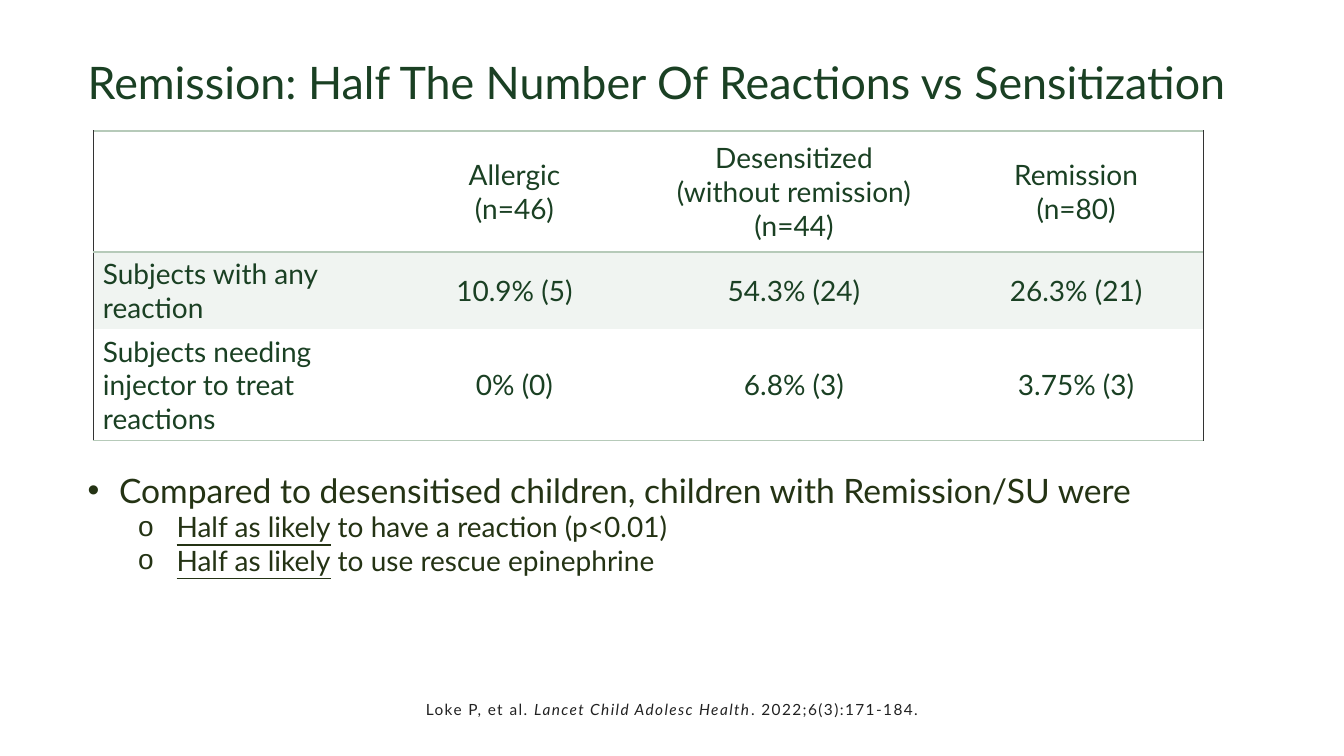
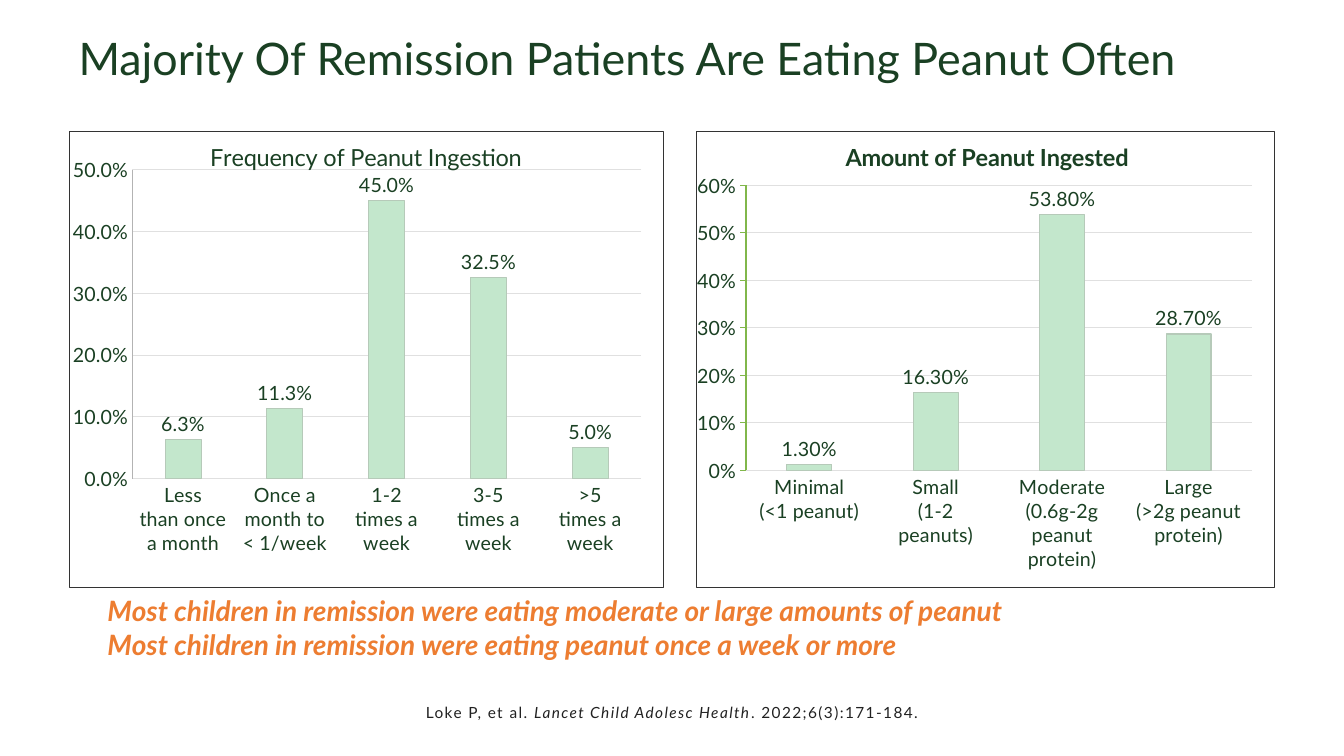
from lxml import etree
from pptx import Presentation, util as u
from pptx.chart.data import CategoryChartData
from pptx.dml.color import RGBColor
from pptx.enum import chart as ch, text as t
from pptx.oxml import parse_xml
from pptx.oxml.ns import nsdecls, qn

COLORS = {
    "heading": "1A4023", "body": "243314", "citation": "212121", "accent": "ED7D31",
    "bar": "C3E7CC", "edge": "B6CAB9", "frame": "333333", "band": "F0F4F1",
    "grid": "E0E0E0", "gray": "B3B3B3", "green": "81B74B",
}
FONT = "Lato"
TITLE = {"size": 32, "color": "heading"}
CITATION = [[("Loke P, et al. ", {}), ("Lancet Child Adolesc Health", {"italic": True}),
             (". 2022;6(3):171-184.", {})]]
CITATION_STYLE = {"size": 11, "color": "citation", "spacing": 100,
                  "align": t.PP_ALIGN.CENTER, "anchor": t.MSO_ANCHOR.MIDDLE}


def write_text(frame, paragraphs, size, color, align=None, anchor=None, spacing=None,
               line_spacing=None, bullets=(), **font_flags):
    """Each paragraph is a string or a list of (text, font flags) runs.

    bullets holds one (character, left margin, hanging indent) per paragraph, in Cm.
    """
    frame.word_wrap = True
    if anchor is not None:
        frame.vertical_anchor = anchor
    for index, runs in enumerate(paragraphs):
        paragraph = frame.paragraphs[0] if index == 0 else frame.add_paragraph()
        if bullets:
            character, margin, hanging = bullets[index]
            properties = paragraph._p.get_or_add_pPr()
            properties.set("marL", str(u.Cm(margin)))
            properties.set("indent", str(-u.Cm(hanging)))
            etree.SubElement(properties, qn("a:buFont")).set("typeface", "Arial")
            etree.SubElement(properties, qn("a:buChar")).set("char", character)
        paragraph.alignment = align
        paragraph.line_spacing = line_spacing
        for content, flags in [(runs, {})] if isinstance(runs, str) else runs:
            run = paragraph.add_run()
            run.text = content
            run.font.name = FONT
            run.font.size = u.Pt(size)
            run.font.color.rgb = RGBColor.from_string(COLORS[color])
            for name, value in {"bold": False, **font_flags, **flags}.items():
                setattr(run.font, name, value)
            if spacing:
                run._r.get_or_add_rPr().set("spc", str(spacing))


def set_layout(parent, position, inner=False):
    """Place a chart part by fractions of the chart: x, y and optionally w, h."""
    target = '<c:layoutTarget val="inner"/>' if inner else ""
    values = "".join(f'<c:{key} val="{value}"/>' for key, value in zip("xywh", position))
    layout = parse_xml(
        f'<c:layout {nsdecls("c")}><c:manualLayout>{target}<c:xMode val="edge"/>'
        f'<c:yMode val="edge"/>{values}</c:manualLayout></c:layout>')
    for old in parent.findall(qn("c:layout")):
        parent.remove(old)
    text_part = parent.find(qn("c:tx"))
    if text_part is None:
        parent.insert(0, layout)
    else:
        text_part.addnext(layout)


presentation = Presentation()
presentation.slide_width, presentation.slide_height = u.Cm(33.87), u.Cm(19.05)
blank = presentation.slide_layouts[6]

# Reactions table
slide = presentation.slides.add_slide(blank)
title = slide.shapes.add_textbox(u.Cm(1.96), u.Cm(1.4), u.Cm(32.56), u.Cm(1.4))
write_text(title.text_frame, ["Remission: Half The Number Of Reactions vs Sensitization"],
           line_spacing=0.9, **TITLE)

rows = [
    [[], ["Allergic", "(n=46)"], ["Desensitized", "(without remission)", "(n=44)"],
     ["Remission", "(n=80)"]],
    [["Subjects with any reaction"], ["10.9% (5)"], ["54.3% (24)"], ["26.3% (21)"]],
    [["Subjects needing injector to treat reactions"], ["0% (0)"], ["6.8% (3)"], ["3.75% (3)"]],
]
column_widths = [7.49, 6.27, 7.82, 6.4]
row_heights = [3.05, 1.95, 2.8]
table = slide.shapes.add_table(len(rows), len(column_widths), u.Cm(2.34), u.Cm(3.3),
                               u.Cm(sum(column_widths)), u.Cm(sum(row_heights))).table
table._tbl.tblPr.find(qn("a:tableStyleId")).text = "{2D5ABB26-0587-4C30-8999-92F81FD0307C}"
for column, width in zip(table.columns, column_widths):
    column.width = u.Cm(width)
for row_index, (row, height) in enumerate(zip(rows, row_heights)):
    table.rows[row_index].height = u.Cm(height)
    for column_index, lines in enumerate(row):
        cell = table.cell(row_index, column_index)
        cell.vertical_anchor = t.MSO_ANCHOR.MIDDLE
        write_text(cell.text_frame, lines, size=20, color="heading",
                   align=t.PP_ALIGN.CENTER if column_index else t.PP_ALIGN.LEFT)
        borders = [
            ("lnL", column_index == 0, "frame", 0.25),
            ("lnR", column_index == len(row) - 1, "frame", 0.25),
            ("lnT", row_index == 0, "edge", 1),
            ("lnB", row_index in (0, len(rows) - 1), "edge", 1),
        ]
        for tag, shown, color, width in borders:
            if shown:
                cell._tc.get_or_add_tcPr().append(parse_xml(
                    f'<a:{tag} {nsdecls("a")} w="{u.Pt(width)}"><a:solidFill>'
                    f'<a:srgbClr val="{COLORS[color]}"/></a:solidFill></a:{tag}>'))
        if row_index == 1:
            cell.fill.solid()
            cell.fill.fore_color.rgb = RGBColor.from_string(COLORS["band"])
        else:
            cell.fill.background()

findings = slide.shapes.add_textbox(u.Cm(1.96), u.Cm(11.71), u.Cm(29.08), u.Cm(3))
half = ("Half as likely", {"size": u.Pt(20), "underline": True})
write_text(findings.text_frame, [
    "Compared to desensitised children, children with Remission/SU were",
    [half, (" to have a reaction (p<0.01)", {"size": u.Pt(20)})],
    [half, (" to use rescue epinephrine", {"size": u.Pt(20)})],
], size=24, color="body", bullets=[("•", 0.79, 0.79), ("o", 2.24, 0.97), ("o", 2.24, 0.97)])
citation = slide.shapes.add_textbox(u.Cm(7.37), u.Cm(17.37), u.Cm(19.13), u.Cm(1.02))
write_text(citation.text_frame, CITATION, **CITATION_STYLE)

# Peanut ingestion charts
slide = presentation.slides.add_slide(blank)
title = slide.shapes.add_textbox(u.Cm(1.73), u.Cm(0.64), u.Cm(32.69), u.Cm(1.63))
write_text(title.text_frame, ["Majority Of Remission Patients Are Eating Peanut Often"], **TITLE)
summary = slide.shapes.add_textbox(u.Cm(2.46), u.Cm(14.83), u.Cm(28.93), u.Cm(1.96))
write_text(summary.text_frame, [
    "Most children in remission were eating moderate or large amounts of peanut",
    "Most children in remission were eating peanut once a week or more",
], size=20, color="accent", bold=True, italic=True)

charts = [
    {"title": "Frequency of Peanut Ingestion", "bold": False, "left": 1.73, "width": 15.01,
     "title_at": (0.23, 0.01), "plot_at": (0.106, 0.084, 0.856, 0.678),
     "data": {"Less\nthan once\na month": 0.063, "Once a\nmonth to\n< 1/week": 0.113,
              "1-2\ntimes a\nweek": 0.45, "3-5\ntimes a\nweek": 0.325,
              ">5\ntimes a\nweek": 0.05},
     "maximum": 0.5, "axis_format": "0.0%", "label_format": "0.0%",
     "tick": ch.XL_TICK_MARK.NONE, "axis_color": "gray"},
    {"title": "Amount of Peanut Ingested", "bold": True, "left": 17.55, "width": 14.58,
     "title_at": (0.25, 0.01), "plot_at": (0.085, 0.118, 0.876, 0.626),
     "data": {"Minimal\n(<1 peanut)": 0.013, "Small\n(1-2\npeanuts)": 0.163,
              "Moderate\n(0.6g-2g\npeanut\nprotein)": 0.538,
              "Large\n(>2g peanut\nprotein)": 0.287},
     "maximum": 0.6, "axis_format": "0%", "label_format": "0.00%",
     "tick": ch.XL_TICK_MARK.OUTSIDE, "axis_color": "green"},
]
for settings in charts:
    data = CategoryChartData()
    data.categories = list(settings["data"])
    data.add_series("Series 1", list(settings["data"].values()))
    chart = slide.shapes.add_chart(ch.XL_CHART_TYPE.COLUMN_CLUSTERED, u.Cm(settings["left"]),
                                   u.Cm(3.3), u.Cm(settings["width"]), u.Cm(11.51), data).chart
    chart.has_legend = False
    chart.font.name = FONT
    chart.font.size = u.Pt(14)
    chart.font.color.rgb = RGBColor.from_string(COLORS["heading"])
    write_text(chart.chart_title.text_frame, [settings["title"]], size=16.8, color="heading",
               bold=settings["bold"])
    chart_part = chart._chartSpace.chart
    set_layout(chart_part.find(qn("c:title")), settings["title_at"])
    set_layout(chart_part.plotArea, settings["plot_at"], inner=True)
    chart_part.addnext(parse_xml(
        f'<c:spPr {nsdecls("c", "a")}><a:noFill/><a:ln w="{u.Pt(0.75)}"><a:solidFill>'
        f'<a:srgbClr val="{COLORS["frame"]}"/></a:solidFill></a:ln></c:spPr>'))

    plot = chart.plots[0]
    plot.gap_width = 182
    plot.vary_by_categories = False
    series = plot.series[0]
    series.format.fill.solid()
    series.format.fill.fore_color.rgb = RGBColor.from_string(COLORS["bar"])
    plot.has_data_labels = True
    labels = plot.data_labels
    labels.show_value = True
    labels.position = ch.XL_LABEL_POSITION.OUTSIDE_END
    labels.number_format = settings["label_format"]
    labels.number_format_is_linked = False

    value_axis, category_axis = chart.value_axis, chart.category_axis
    value_axis.minimum_scale, value_axis.maximum_scale = 0, settings["maximum"]
    value_axis.major_unit = 0.1
    value_axis.tick_labels.number_format = settings["axis_format"]
    value_axis.tick_labels.number_format_is_linked = False
    value_axis.major_tick_mark = settings["tick"]
    category_axis.major_tick_mark = ch.XL_TICK_MARK.NONE
    for line, color in [(series.format.line, "edge"),
                        (value_axis.format.line, settings["axis_color"]),
                        (value_axis.major_gridlines.format.line, "grid"),
                        (category_axis.format.line, "grid")]:
        line.width = u.Pt(0.75)
        line.color.rgb = RGBColor.from_string(COLORS[color])

citation = slide.shapes.add_textbox(u.Cm(7.37), u.Cm(17.45), u.Cm(19.13), u.Cm(1.02))
write_text(citation.text_frame, CITATION, **CITATION_STYLE)

presentation.save("out.pptx")
